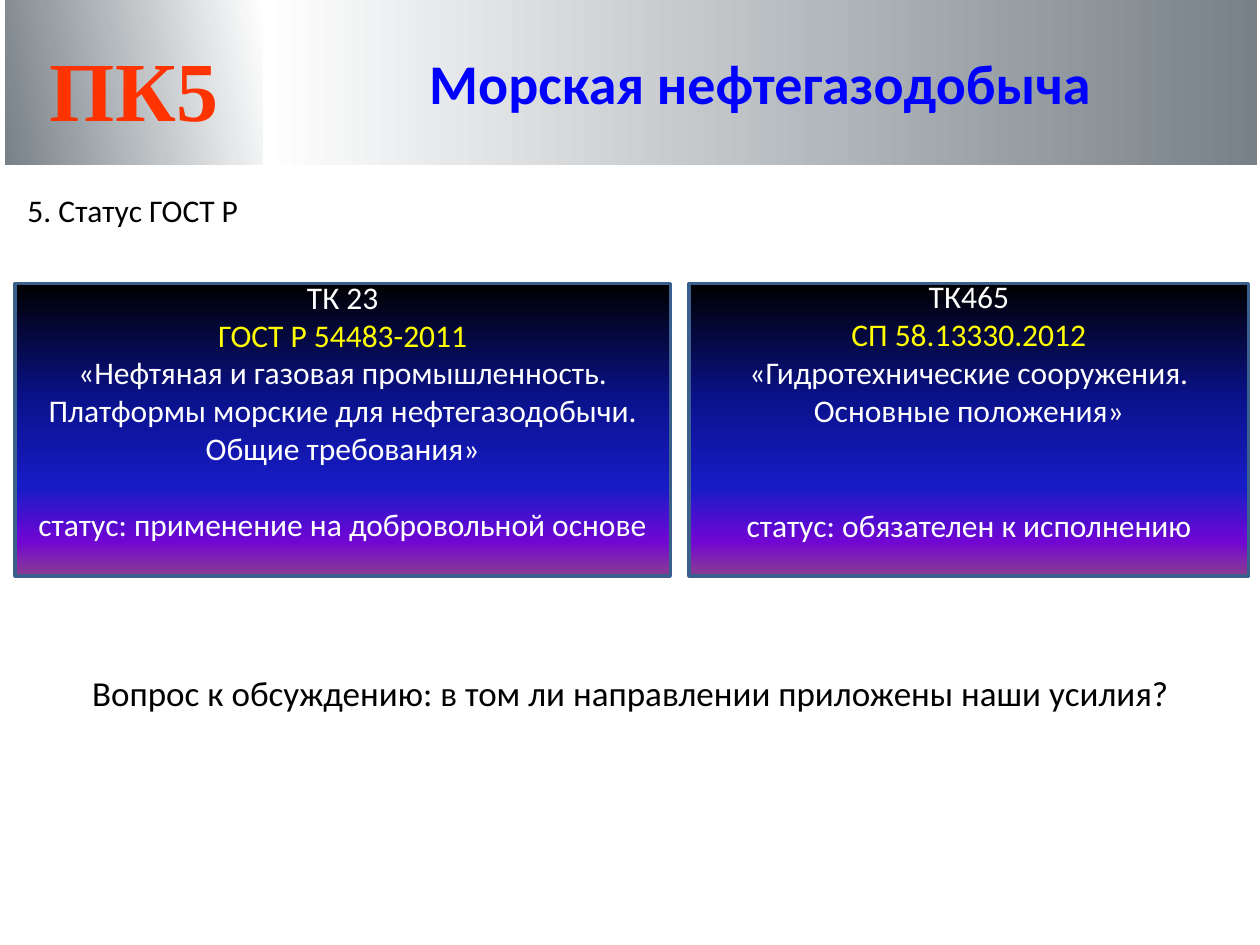
from collections import namedtuple
from copy import deepcopy

from pptx import Presentation
from pptx.dml.color import RGBColor
from pptx.enum.shapes import MSO_SHAPE as Preset
from pptx.enum.text import MSO_ANCHOR as Anchor, MSO_AUTO_SIZE as AutoSize, PP_ALIGN as Align
from pptx.util import Inches, Pt

BLACK = RGBColor(0x00, 0x00, 0x00)
WHITE = RGBColor(0xFF, 0xFF, 0xFF)
STEEL = RGBColor(0x78, 0x81, 0x88)
RED = RGBColor(0xFF, 0x33, 0x00)
BLUE = RGBColor(0x00, 0x00, 0xFF)
YELLOW = RGBColor(0xFF, 0xFF, 0x00)
BORDER = RGBColor(0x3A, 0x5F, 0x8C)
METAL = [(0, WHITE), (1, STEEL)]
DUSK = [
    (0, BLACK),
    (0.4, RGBColor(0x0A, 0x12, 0x8C)),
    (0.7, RGBColor(0x18, 0x1C, 0xC7)),
    (0.88, RGBColor(0x70, 0x05, 0xD4)),
    (1, RGBColor(0x8C, 0x3D, 0x91)),
]

COLUMNS, ROWS = 100, 75
CELL = Inches(0.1)
LINE = Pt(22)
Box = namedtuple("Box", "left top width height")


def emu(box):
    """Turn a box in grid cells into slide lengths."""
    return [round(cells * CELL) for cells in box]


def paint(shape, stops, angle):
    """Fill a shape with a linear gradient, its angle counted clockwise."""
    shape.fill.gradient()
    shape.fill.gradient_angle = -angle % 360
    stop_list = shape.fill._fill._gradFill.gsLst
    for _ in stops[2:]:
        stop_list.append(deepcopy(stop_list[0]))
    for stop, (position, color) in zip(shape.fill.gradient_stops, stops):
        stop.position = position
        stop.color.rgb = color


def add_panel(page, box, preset, stops, angle):
    """Add a gradient shape without shadow or outline."""
    panel = page.shapes.add_shape(preset, *emu(box))
    panel.shadow.inherit = False
    panel.line.fill.background()
    paint(panel, stops, angle)
    panel.text_frame.vertical_anchor = Anchor.MIDDLE
    return panel


def write(para, text, size, color, align=Align.CENTER, font="Calibri", bold=False):
    """Write one styled run into a paragraph."""
    para.alignment = align
    span = para.add_run()
    span.text = text
    span.font.name, span.font.size, span.font.bold = font, Pt(size), bold
    span.font.color.rgb = color


def add_header(page, box, code, title):
    """Place the code badge and the title band side by side."""
    badge_width = box.width * 0.206
    badge_box = box._replace(width=badge_width)
    band_box = box._replace(left=box.left + badge_width, width=box.width - badge_width)
    badge = add_panel(page, badge_box, Preset.RECTANGLE, METAL, 170).text_frame
    badge.margin_top = Inches(0.14)
    write(badge.paragraphs[0], code, 48, RED, font="Times New Roman", bold=True)
    band = add_panel(page, band_box, Preset.RECTANGLE, METAL, 0).text_frame
    band.word_wrap = False
    write(band.paragraphs[0], title, 32, BLUE, bold=True)


def add_caption(page, box, text, size, align):
    """Place one line of plain text."""
    frame = page.shapes.add_textbox(*emu(box)).text_frame
    frame.word_wrap = True
    frame.auto_size = AutoSize.SHAPE_TO_FIT_TEXT
    write(frame.paragraphs[0], text, size, BLACK, align)


def add_standard(page, box, committee, number, name, status, gap_lines):
    """Place a card on one standard, its status set apart by a gap."""
    card = add_panel(page, box, Preset.FLOWCHART_PROCESS, DUSK, 90)
    card.line.color.rgb = BORDER
    card.line.width = Pt(2)
    frame = card.text_frame
    frame.word_wrap = True
    frame.margin_bottom = frame.margin_top + LINE
    lines = [(committee, WHITE), (number, YELLOW), (name, WHITE), (status, WHITE)]
    for index, (text, color) in enumerate(lines):
        para = frame.add_paragraph() if index else frame.paragraphs[0]
        write(para, text, 18, color)
    para.space_before = gap_lines * LINE


def main():
    """Build the slide and save it."""
    deck = Presentation()
    deck.slide_width, deck.slide_height = COLUMNS * CELL, ROWS * CELL
    page = deck.slides.add_slide(deck.slide_layouts[6])
    add_header(page, Box(0.4, 0, 99.4, 13.1), "ПК5", "Морская нефтегазодобыча")
    add_caption(page, Box(1.2, 14.7, 69.3, 4), "5. Статус ГОСТ Р", 18, Align.JUSTIFY)
    add_standard(
        page, Box(1.2, 22.5, 52, 23.2), "ТК 23", "ГОСТ Р 54483-2011",
        "«Нефтяная и газовая промышленность. Платформы морские для нефтегазодобычи. "
        "Общие требования»",
        "статус: применение на добровольной основе", 1,
    )
    add_standard(
        page, Box(54.7, 22.5, 44.4, 23.2), "ТК465", "СП 58.13330.2012",
        "«Гидротехнические сооружения. Основные положения»",
        "статус: обязателен к исполнению", 2,
    )
    add_caption(
        page, Box(2.8, 52.8, 94.5, 4.4),
        "Вопрос к обсуждению: в том ли направлении приложены наши усилия?", 20, Align.CENTER,
    )
    deck.save("out.pptx")


if __name__ == "__main__":
    main()
